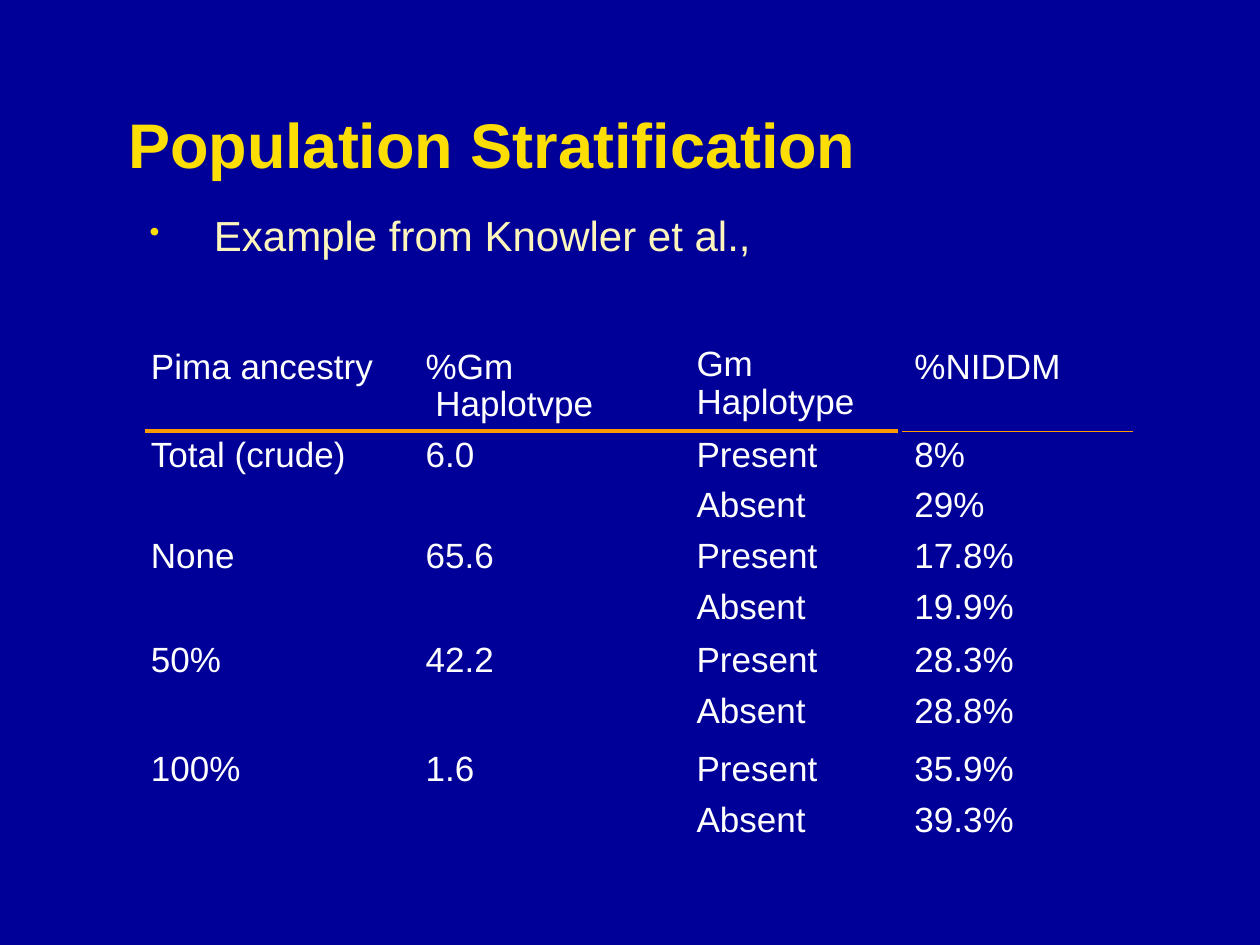
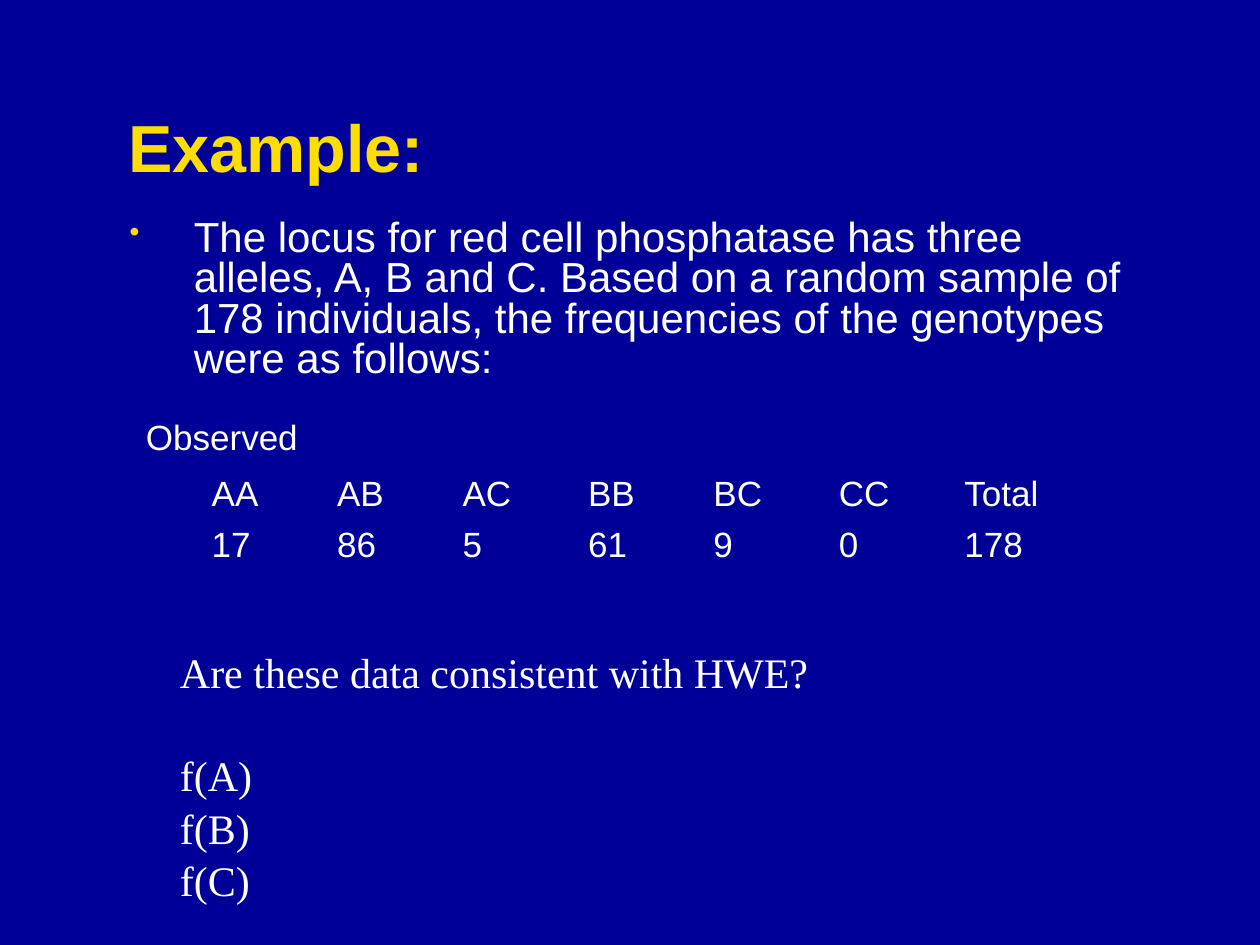
"""Build two genetics slides: population stratification and a genotype example."""
from lxml.etree import SubElement
from pptx import Presentation
from pptx.dml.color import RGBColor
from pptx.enum.shapes import MSO_CONNECTOR
from pptx.enum.text import MSO_ANCHOR
from pptx.oxml.ns import qn
from pptx.util import Inches, Pt

NAVY, YELLOW, CREAM, WHITE, ORANGE = "000099", "FCDE04", "FDF5BB", "FFFFFF", "FF9900"
NO_STYLE = "{2D5ABB26-0587-4C30-8999-92F81FD0307C}"


def write(frame, text, size, color=WHITE, spacing=None, font="Arial", bold=False, bullet=False):
    frame.word_wrap = True
    frame.text = text
    for paragraph in frame.paragraphs:
        if bullet:
            properties = paragraph._p.get_or_add_pPr()
            properties.set("marL", str(Inches(0.51)))
            properties.set("indent", str(-Inches(0.51)))
            bullet_color = SubElement(properties, qn("a:buClr"))
            SubElement(bullet_color, qn("a:srgbClr"), val=YELLOW)
            SubElement(properties, qn("a:buSzPct"), val="70000")
            SubElement(properties, qn("a:buChar"), char="•")
        paragraph.line_spacing = spacing
        paragraph.font.name = font
        paragraph.font.size = Pt(size)
        paragraph.font.bold = bold
        paragraph.font.color.rgb = RGBColor.from_string(color)


def add_text(slide, box, text, size, **style):
    frame = slide.shapes.add_textbox(*map(Inches, box)).text_frame
    write(frame, text, size, **style)
    return frame


deck = Presentation()
deck.slide_width, deck.slide_height = Inches(10), Inches(7.5)

slides = []
for title, size, height in [("Population Stratification", 36, 0.7), ("Example:", 38, 1.37)]:
    slide = deck.slides.add_slide(deck.slide_layouts[6])
    slide.background.fill.solid()
    slide.background.fill.fore_color.rgb = RGBColor.from_string(NAVY)
    add_text(slide, (0.92, 0.79, 8.33, height), title, size, color=YELLOW, bold=True)
    slides.append(slide)
stratification, example = slides

add_text(stratification, (1.09, 1.66, 8.06, 0.46), "Example from Knowler et al.,", 24,
         color=CREAM, spacing=0.9, bullet=True)

columns = [(1.1, 2.16), (3.28, 2.12), (5.43, 1.7), (7.16, 1.84)]
rows = [
    (2.72, 0.66, ["Pima ancestry", "%Gm\n Haplotvpe", "Gm\nHaplotype", "%NIDDM"]),
    (3.42, 0.38, ["Total (crude)", "6.0", "Present", "8%"]),
    (3.82, 0.38, ["", "", "Absent", "29%"]),
    (4.22, 0.38, ["None", "65.6", "Present", "17.8%"]),
    (4.63, 0.39, ["", "", "Absent", "19.9%"]),
    (5.05, 0.38, ["50%", "42.2", "Present", "28.3%"]),
    (5.45, 0.43, ["", "", "Absent", "28.8%"]),
    (5.91, 0.38, ["100%", "1.6", "Present", "35.9%"]),
    (6.32, 0.39, ["", "", "Absent", "39.3%"]),
]
for top, height, values in rows:
    for (left, width), value in zip(columns, values):
        if value:
            entry = add_text(stratification, (left, top, width, height), value, 20, spacing=0.9)
            if value == "Gm\nHaplotype":
                entry.vertical_anchor = MSO_ANCHOR.MIDDLE

for start, end, weight in [(1.15, 7.13, 0), (7.16, 8.99, 0.25)]:
    header_rule = stratification.shapes.add_connector(
        MSO_CONNECTOR.STRAIGHT, Inches(start), Inches(3.42), Inches(end), Inches(3.42))
    header_rule.line.color.rgb = RGBColor.from_string(ORANGE)
    header_rule.line.width = Pt(weight)
    SubElement(header_rule._element.spPr, qn("a:effectLst"))

add_text(example, (0.93, 1.7, 8.22, 1.82),
         "The locus for red cell phosphatase has three alleles, A, B and C. Based on a random "
         "sample of 178 individuals, the frequencies of the genotypes were as follows:",
         24, spacing=0.8, bullet=True)

counts = [("AA", "17"), ("AB", "86"), ("AC", "5"), ("BB", "61"), ("BC", "9"), ("CC", "0"),
          ("Total", "178")]
genotypes = example.shapes.add_table(
    2, len(counts), Inches(1.58), Inches(3.75), Inches(6.97), Inches(0.76)).table
genotypes.first_row = genotypes.horz_banding = False
genotypes._tbl.tblPr.find(qn("a:tableStyleId")).text = NO_STYLE
for column, pair in enumerate(counts):
    for row, value in enumerate(pair):
        cell = genotypes.cell(row, column)
        cell.fill.background()
        write(cell.text_frame, value, 20, spacing=0.9)

question = add_text(example, (1.33, 5.08, 8.17, 2.12),
                    "Are these data consistent with HWE?\nf(A)\nf(B)\nf(C)", 24,
                    font="Times New Roman")
for paragraph, gap in zip(question.paragraphs[1:], [30.2, 1.3, 1.3]):
    paragraph.space_before = Pt(gap)
add_text(example, (1.06, 3.25, 1.5, 0.43), "Observed", 20)

deck.save("out.pptx")
